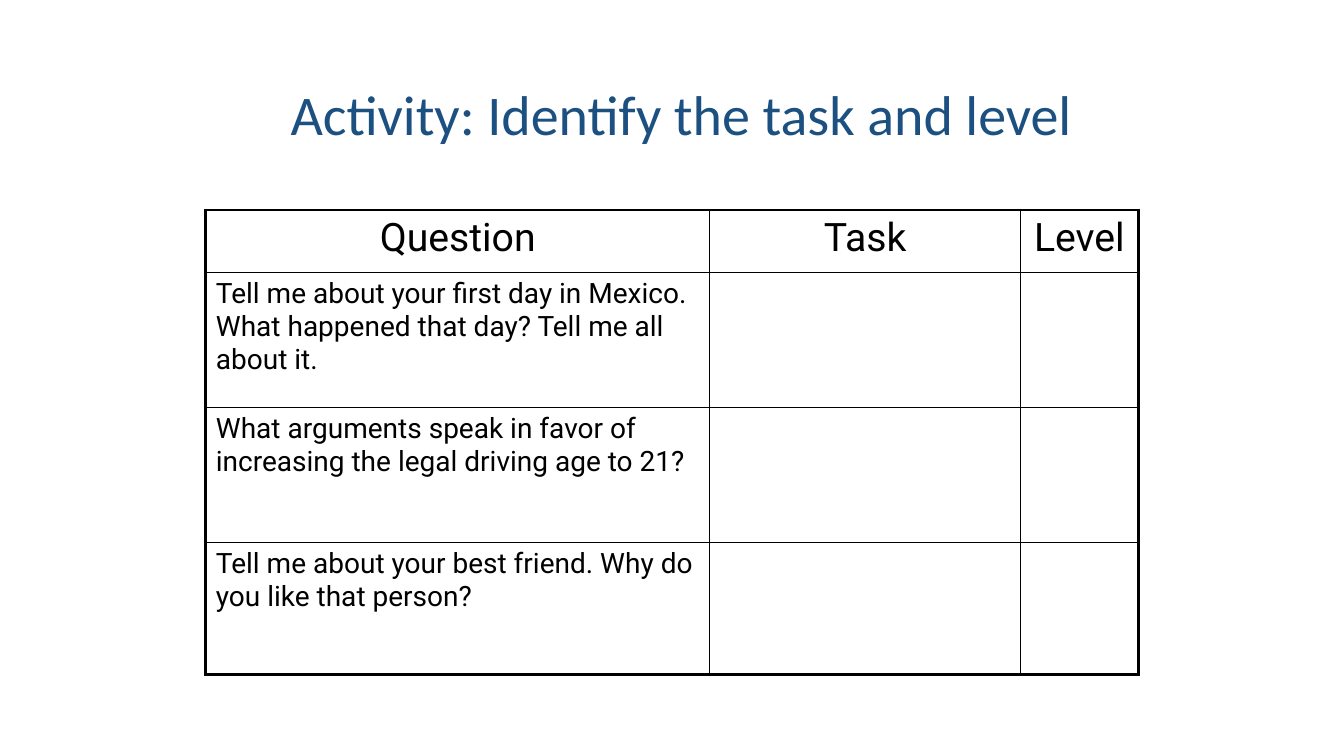
import pptx
import pptx.dml.color
import pptx.enum.text
import pptx.oxml
import pptx.oxml.ns
import pptx.util

Pt = pptx.util.Pt
ALIGN = pptx.enum.text.PP_ALIGN
ANCHOR = pptx.enum.text.MSO_ANCHOR

BLUE = pptx.dml.color.RGBColor(0x1C, 0x50, 0x81)
BLACK = pptx.dml.color.RGBColor(0, 0, 0)

OUTER_LINE, INNER_LINE = 2.25, 1
COLUMN_WIDTHS = [360, 222, 84]
ROW_HEIGHTS = [44.6, 96.5, 96.5, 94]
ROWS = [
    ["Question", "Task", "Level"],
    ["Tell me about your first day in Mexico. What happened that day? "
     "Tell me all about it.", "", ""],
    ["What arguments speak in favor of increasing the legal driving age to 21?",
     "", ""],
    ["Tell me about your best friend. Why do you like that person?", "", ""],
]


def style_paragraph(para, font_name, size, color, alignment):
    para.alignment = alignment
    for span in para.runs:
        span.font.name = font_name
        span.font.size = Pt(size)
        span.font.color.rgb = color


def set_borders(cell, widths):
    """Draw the left, right, top and bottom lines, in that order."""
    properties = cell._tc.get_or_add_tcPr()
    namespace = pptx.oxml.ns.nsdecls("a")
    for index, (side, width) in enumerate(zip("LRTB", widths)):
        line = pptx.oxml.parse_xml(
            f'<a:ln{side} {namespace} w="{Pt(width)}"><a:solidFill>'
            f'<a:srgbClr val="{BLACK}"/></a:solidFill></a:ln{side}>')
        properties.insert(index, line)


def add_title(page, left, top, width, height):
    title = page.shapes.title
    title.left, title.top = Pt(left), Pt(top)
    title.width, title.height = Pt(width), Pt(height)
    title.text_frame.text = "Activity: Identify the task and level"
    title.text_frame.vertical_anchor = ANCHOR.MIDDLE
    para = title.text_frame.paragraphs[0]
    para.line_spacing = 0.9
    style_paragraph(para, "Calibri", 40, BLUE, ALIGN.CENTER)


def add_question_table(page, left, top):
    last_row, last_column = len(ROWS) - 1, len(COLUMN_WIDTHS) - 1
    table = page.shapes.add_table(
        len(ROWS), len(COLUMN_WIDTHS), Pt(left), Pt(top),
        Pt(sum(COLUMN_WIDTHS)), Pt(sum(ROW_HEIGHTS))).table
    table.first_row = table.horz_banding = False
    for column, width in zip(table.columns, COLUMN_WIDTHS):
        column.width = Pt(width)

    for r, (texts, height) in enumerate(zip(ROWS, ROW_HEIGHTS)):
        table.rows[r].height = Pt(height)
        size, alignment = (28, ALIGN.CENTER) if r == 0 else (20, ALIGN.LEFT)
        for c, text in enumerate(texts):
            cell = table.cell(r, c)
            cell.fill.background()
            cell.text_frame.text = text
            style_paragraph(cell.text_frame.paragraphs[0],
                            "Roboto", size, BLACK, alignment)
            # Thick lines only around the outside
            on_edge = [c == 0, c == last_column, r == 0, r == last_row]
            set_borders(cell, [OUTER_LINE if edge else INNER_LINE
                               for edge in on_edge])


def main():
    deck = pptx.Presentation()
    deck.slide_width, deck.slide_height = Pt(960), Pt(540)
    page = deck.slides.add_slide(deck.slide_layouts[5])  # Title Only
    add_title(page, 182, 43, 609, 81.5)
    add_question_table(page, 147, 150)
    deck.save("out.pptx")


if __name__ == "__main__":
    main()
